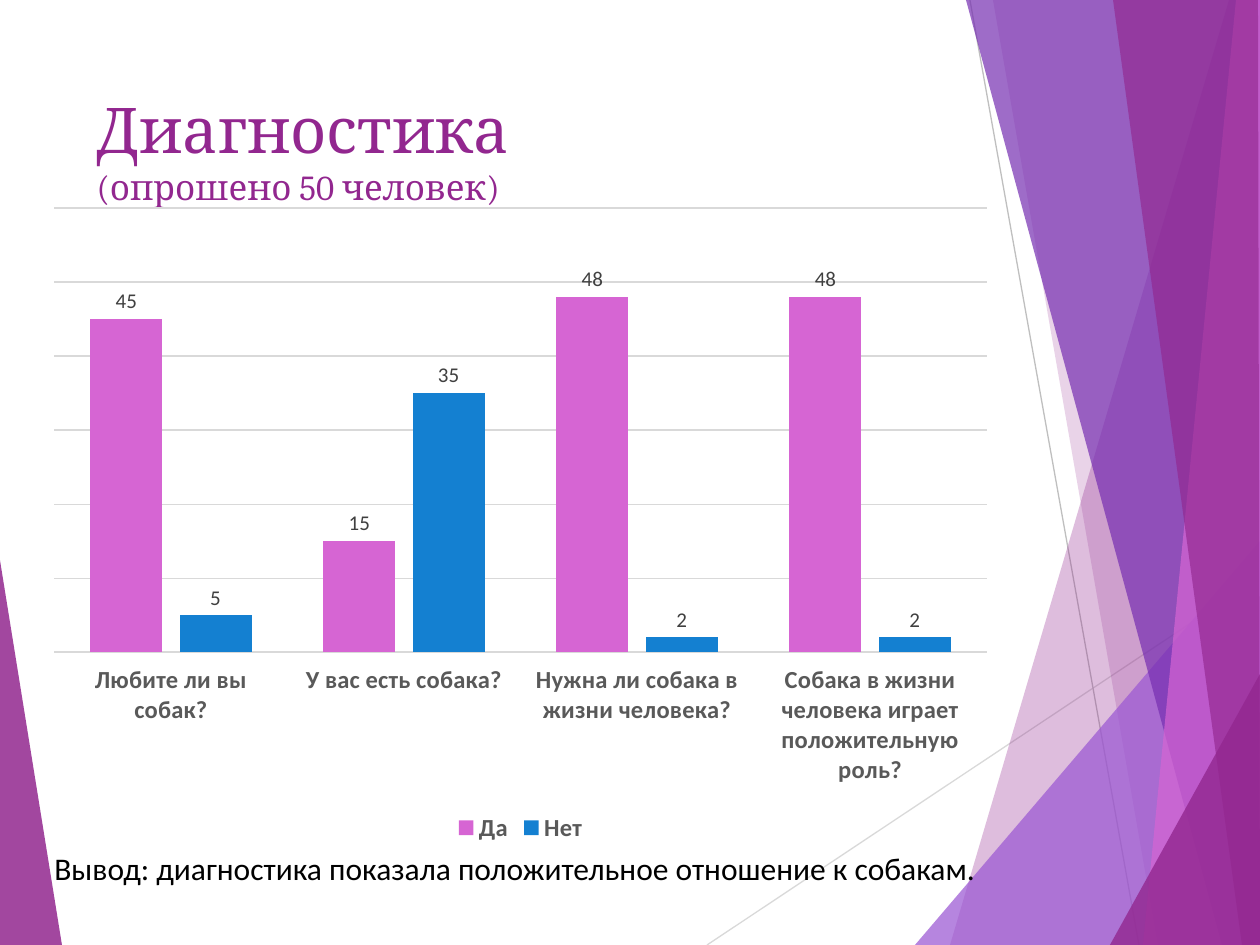
from lxml import etree
from pptx import Presentation
from pptx.chart.data import CategoryChartData
from pptx.dml.color import RGBColor
from pptx.enum.chart import XL_CHART_TYPE, XL_LABEL_POSITION, XL_LEGEND_POSITION, XL_TICK_LABEL_POSITION, XL_TICK_MARK
from pptx.enum.shapes import MSO_CONNECTOR
from pptx.enum.text import MSO_ANCHOR, MSO_AUTO_SIZE, PP_ALIGN
from pptx.oxml.ns import qn
from pptx.util import Pt

COLUMNS = XL_CHART_TYPE.COLUMN_CLUSTERED
OUTSIDE_END = XL_LABEL_POSITION.OUTSIDE_END
LEGEND_BOTTOM = XL_LEGEND_POSITION.BOTTOM
LABELS_LOW = XL_TICK_LABEL_POSITION.LOW
NO_TICK = XL_TICK_MARK.NONE
STRAIGHT = MSO_CONNECTOR.STRAIGHT
TOP = MSO_ANCHOR.TOP
NO_FIT = MSO_AUTO_SIZE.NONE
LEFT, JUSTIFY = PP_ALIGN.LEFT, PP_ALIGN.JUSTIFY

PX = 914400 / 126
W, H = 1260, 945
TITLE_ONLY = 5

COLORS = {
    "purple": "92278F", "lilac": "9B57D3", "violet": "762EB1",
    "pink": "D665D3", "blue": "1480D1", "grid": "D9D9D9", "line": "BFBFBF",
    "axis": "595959", "label": "404040", "text": "000000",
}

# Colour, opacity in percent, corner points
FACETS = [
    ("purple", 85, [(0, 560), (62, H), (0, H)]),
    ("purple", 30, [(1229, 0), (950, H), (W, H), (W, 0)]),
    ("purple", 20, [(993, 0), (1158, H), (W, H), (W, 0)]),
    ("lilac", 72, [(915, H), (W, 541), (W, H)]),
    ("violet", 70, [(966, 0), (1222, H), (W, H), (W, 0)]),
    ("pink", 70, [(1236, 0), (1143, H), (W, H), (W, 0)]),
    ("purple", 65, [(1113, 0), (1242, H), (W, H), (1258, 0)]),
    ("purple", 80, [(1110, H), (W, 674), (W, H)]),
]
RAYS = [("grid", 707, H, W, 577), ("line", 970, 0, 1139, H)]

QUESTIONS = [
    "Любите ли вы собак?",
    "У вас есть собака?",
    "Нужна ли собака в жизни человека?",
    "Собака в жизни человека играет положительную роль?",
]
ANSWERS = [("Да", (45, 15, 48, 48), "pink"), ("Нет", (5, 35, 2, 2), "blue")]


def px(*values):
    return [round(v * PX) for v in values]


def rgb(name):
    return RGBColor.from_string(COLORS[name])


def set_font(font, name, color, size=None, bold=None):
    font.name = name
    font.color.rgb = rgb(color)
    font.bold = bold
    if size:
        font.size = Pt(size)


def set_line(line, color, width):
    line.color.rgb = rgb(color)
    line.width = Pt(width)


def add_facet(s, color, opacity, points):
    builder = s.shapes.build_freeform(*points[0], scale=PX)
    builder.add_line_segments(points[1:])
    sp = builder.convert_to_shape()
    sp.shadow.inherit = False
    sp.line.fill.background()
    sp.fill.solid()
    sp.fill.fore_color.rgb = rgb(color)
    clr = sp.fill._xPr.find(".//" + qn("a:srgbClr"))
    etree.SubElement(clr, qn("a:alpha"), val=str(opacity * 1000))


def add_ray(s, color, *ends):
    ray = s.shapes.add_connector(STRAIGHT, *px(*ends))
    set_line(ray.line, color, 0.75)
    etree.SubElement(ray._element.spPr, qn("a:effectLst"))


def fill_title(s, heading, note):
    sp = s.shapes.title
    sp.left, sp.top, sp.width, sp.height = px(84, 84, 874, 181)
    tf = sp.text_frame
    tf.auto_size = NO_FIT
    tf.vertical_anchor = TOP
    p = tf.paragraphs[0]
    p.alignment = LEFT
    set_font(p.font, "Cambria", "purple")
    for text, size in ((heading, 36), (note, 20)):
        if p.runs:
            p.add_line_break()
        r = p.add_run()
        r.text = text
        r.font.size = Pt(size)


def add_survey_chart(s):
    data = CategoryChartData()
    data.categories = QUESTIONS
    for name, values, _ in ANSWERS:
        data.add_series(name, values)
    chart = s.shapes.add_chart(COLUMNS, *px(35, 195, 971, 653), data).chart
    set_font(chart.font, "Calibri", "text", 10)
    chart.has_title = False
    chart.has_legend = True
    chart.legend.position = LEGEND_BOTTOM
    chart.legend.include_in_layout = False
    set_font(chart.legend.font, "Calibri", "axis", 14, True)

    cat = chart.category_axis
    cat.major_tick_mark = NO_TICK
    cat.tick_label_position = LABELS_LOW
    set_font(cat.tick_labels.font, "Calibri", "axis", 14, True)
    set_line(cat.format.line, "grid", 1)

    val = chart.value_axis
    val.visible = False
    val.minimum_scale, val.maximum_scale, val.major_unit = 0, 60, 10
    set_line(val.major_gridlines.format.line, "grid", 0.75)

    plot = chart.plots[0]
    plot.gap_width, plot.overlap = 100, -24
    plot.vary_by_categories = False
    for series, (_, _, color) in zip(plot.series, ANSWERS):
        series.format.fill.solid()
        series.format.fill.fore_color.rgb = rgb(color)
        labels = series.data_labels
        labels.show_value = True
        labels.position = OUTSIDE_END
        set_font(labels.font, "Calibri", "label", 12)


def add_conclusion(s, text):
    tf = s.shapes.add_textbox(*px(42, 843, 982, 62)).text_frame
    tf.word_wrap = True
    p = tf.paragraphs[0]
    p.text = text
    p.alignment = JUSTIFY
    p.space_before = Pt(10)
    set_font(p.font, "Calibri", "text", 18)


def main():
    prs = Presentation()
    prs.slide_width, prs.slide_height = px(W, H)
    s = prs.slides.add_slide(prs.slide_layouts[TITLE_ONLY])
    add_facet(s, *FACETS[0])
    for ray in RAYS:
        add_ray(s, *ray)
    for facet in FACETS[1:]:
        add_facet(s, *facet)
    fill_title(s, "Диагностика", "(опрошено 50 человек)")
    add_survey_chart(s)
    add_conclusion(s, "Вывод: диагностика показала положительное отношение к собакам.")
    prs.save("out.pptx")


if __name__ == "__main__":
    main()
